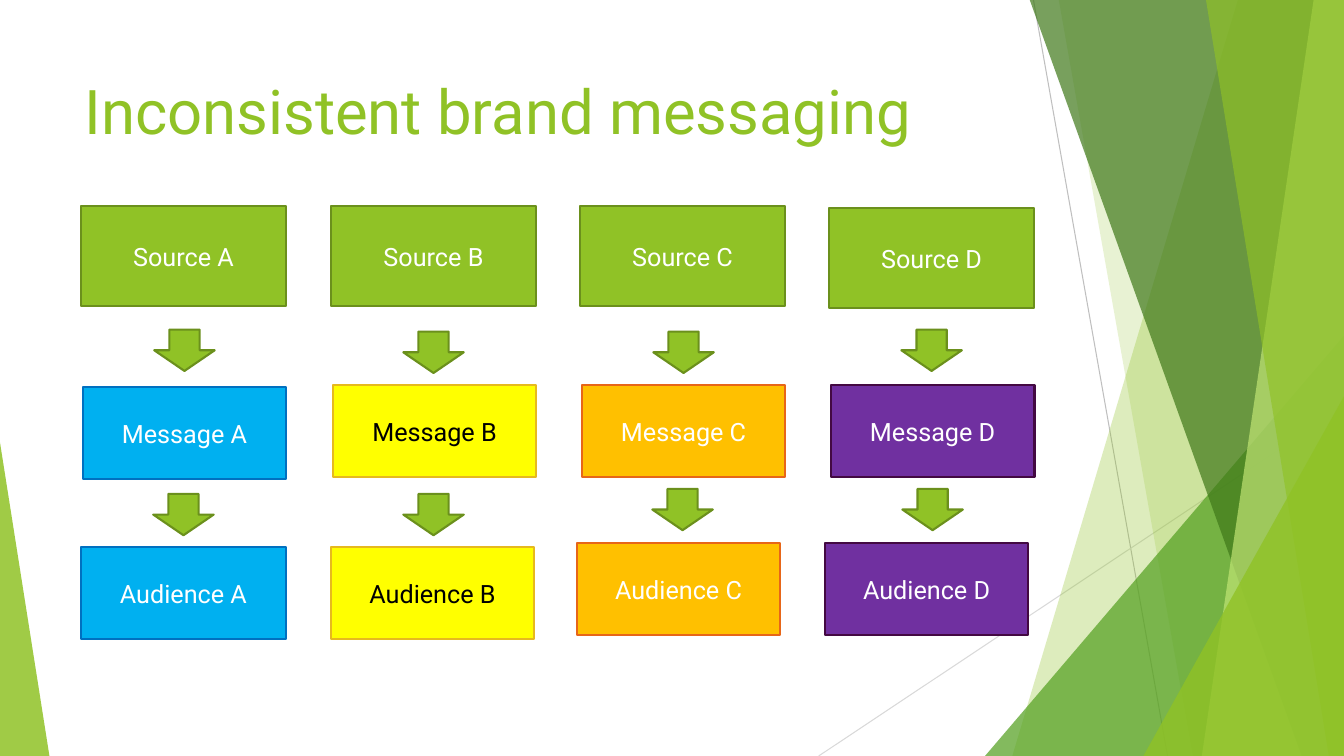
from lxml import etree
from pptx import Presentation
from pptx.dml.color import RGBColor
from pptx.enum.shapes import MSO_CONNECTOR, MSO_SHAPE
from pptx.enum.text import MSO_ANCHOR, PP_ALIGN
from pptx.oxml.ns import qn
from pptx.util import Inches, Pt

RECTANGLE, DOWN_ARROW = MSO_SHAPE.RECTANGLE, MSO_SHAPE.DOWN_ARROW
TRIANGLE = MSO_SHAPE.ISOSCELES_TRIANGLE
STRAIGHT = MSO_CONNECTOR.STRAIGHT
MIDDLE, CENTER = MSO_ANCHOR.MIDDLE, PP_ALIGN.CENTER

FONT = "Roboto"
COLORS = {
    "green": "90C226", "green edge": "6B901C", "leaf": "54A021",
    "forest": "3F7819", "lime": "C0E474",
    "blue": "00B0F0", "blue edge": "0070C0",
    "yellow": "FFFF00", "yellow edge": "E6B91E",
    "orange": "FFC000", "orange edge": "E76618",
    "purple": "7030A0", "purple edge": "430942",
    "white": "FFFFFF", "black": "000000",
    "gray": "BFBFBF", "light gray": "D9D9D9",
}
WIDTH, HEIGHT = 13.33, 7.5
TITLE = "Inconsistent brand messaging"

# start, end, color
RAYS = [
    ((10.25, 0), (11.58, HEIGHT), "gray"),
    ((WIDTH, 4.03), (8.12, HEIGHT), "light gray"),
]
# Bands reach the right edge: top left x, bottom left x, color, opacity %
# Peaks rest on the bottom edge: left, top, width, apex position, color, opacity %
BACKDROP = [
    ("band", (12.28, 10.04), "green", 30),
    ("band", (10.5, 11.83), "green", 20),
    ("peak", (9.77, 3.33, 3.56, 1), "leaf", 72),
    ("band", (10.21, 12.91), "forest", 70),
    ("band", (13.03, 11.92), "lime", 70),
    ("band", (11.96, 13.18), "green", 65),
    ("peak", (11.34, 3.93, 1.99, 1), "green", 80),
    ("peak", (0, 4.39, 0.49, 0), "green", 85),
]

# letter, theme color, text color
CHANNELS = [
    ("A", "blue", "white"),
    ("B", "yellow", "black"),
    ("C", "orange", "white"),
    ("D", "purple", "white"),
]
# stage, height, (left, top, width) for each channel
STAGES = [
    ("Source", 1, [(0.8, 2.04, 2.04), (3.28, 2.04, 2.04),
                   (5.75, 2.04, 2.04), (8.22, 2.06, 2.04)]),
    ("Message", 0.91, [(0.82, 3.84, 2.02), (3.3, 3.82, 2.02),
                       (5.77, 3.82, 2.02), (8.24, 3.82, 2.02)]),
    ("Audience", 0.91, [(0.8, 5.43, 2.04), (3.28, 5.43, 2.02),
                        (5.72, 5.39, 2.02), (8.18, 5.39, 2.02)]),
]
ARROW_SIZE = (0.6, 0.41)
ARROWS = [
    (1.53, 3.27), (4, 3.29), (6.48, 3.29), (8.94, 3.27),
    (1.52, 4.9), (4, 4.9), (6.47, 4.85), (8.95, 4.85),
]


def rgb(name):
    return RGBColor.from_string(COLORS[name])


def write(shape, text, size, color):
    shape.text_frame.word_wrap = True
    paragraph = shape.text_frame.paragraphs[0]
    paragraph.text = text
    paragraph.font.name = FONT
    paragraph.font.size = Pt(size)
    paragraph.font.color.rgb = rgb(color)
    return paragraph


def add_ray(shapes, start, end, color):
    ray = shapes.add_connector(STRAIGHT, *map(Inches, start + end))
    ray.line.color.rgb = rgb(color)
    ray.line.width = Pt(0.75)
    etree.SubElement(ray._element.spPr, qn("a:effectLst"))


def add_backdrop(shapes, kind, outline, color, opacity):
    if kind == "band":
        top_x, bottom_x = outline
        corners = [(top_x, -0.01), (WIDTH, -0.01), (WIDTH, HEIGHT), (bottom_x, HEIGHT)]
        points = [(Inches(x), Inches(y)) for x, y in corners]
        builder = shapes.build_freeform(*points[0])
        builder.add_line_segments(points[1:], close=True)
        facet = builder.convert_to_shape()
    else:
        left, top, width, apex = outline
        facet = shapes.add_shape(TRIANGLE, *map(Inches, (left, top, width, HEIGHT - top)))
        facet.adjustments[0] = apex
    facet.shadow.inherit = False
    facet.line.fill.background()
    facet.fill.solid()
    facet.fill.fore_color.rgb = rgb(color)
    fill_color = facet._element.spPr.find(qn("a:solidFill"))[0]
    etree.SubElement(fill_color, qn("a:alpha"), val=str(opacity * 1000))


def add_block(shapes, preset, bounds, color):
    block = shapes.add_shape(preset, *map(Inches, bounds))
    block.shadow.inherit = False
    block.fill.solid()
    block.fill.fore_color.rgb = rgb(color)
    block.line.color.rgb = rgb(color + " edge")
    block.line.width = Pt(1.5)
    return block


def main():
    deck = Presentation()
    deck.slide_width, deck.slide_height = Inches(WIDTH), Inches(HEIGHT)
    shapes = deck.slides.add_slide(deck.slide_layouts[6]).shapes

    for ray in RAYS:
        add_ray(shapes, *ray)
    for facet in BACKDROP:
        add_backdrop(shapes, *facet)

    title = shapes.add_textbox(*map(Inches, (0.74, 0.67, 9.4, 1.44)))
    write(title, TITLE, 44, "green")

    for stage, height, places in STAGES:
        for (letter, theme, text_color), place in zip(CHANNELS, places):
            color = "green" if stage == "Source" else theme
            ink = "white" if stage == "Source" else text_color
            box = add_block(shapes, RECTANGLE, (*place, height), color)
            box.text_frame.vertical_anchor = MIDDLE
            write(box, f"{stage} {letter}", 18, ink).alignment = CENTER
    for corner in ARROWS:
        add_block(shapes, DOWN_ARROW, corner + ARROW_SIZE, "green")

    deck.save("out.pptx")


if __name__ == "__main__":
    main()
